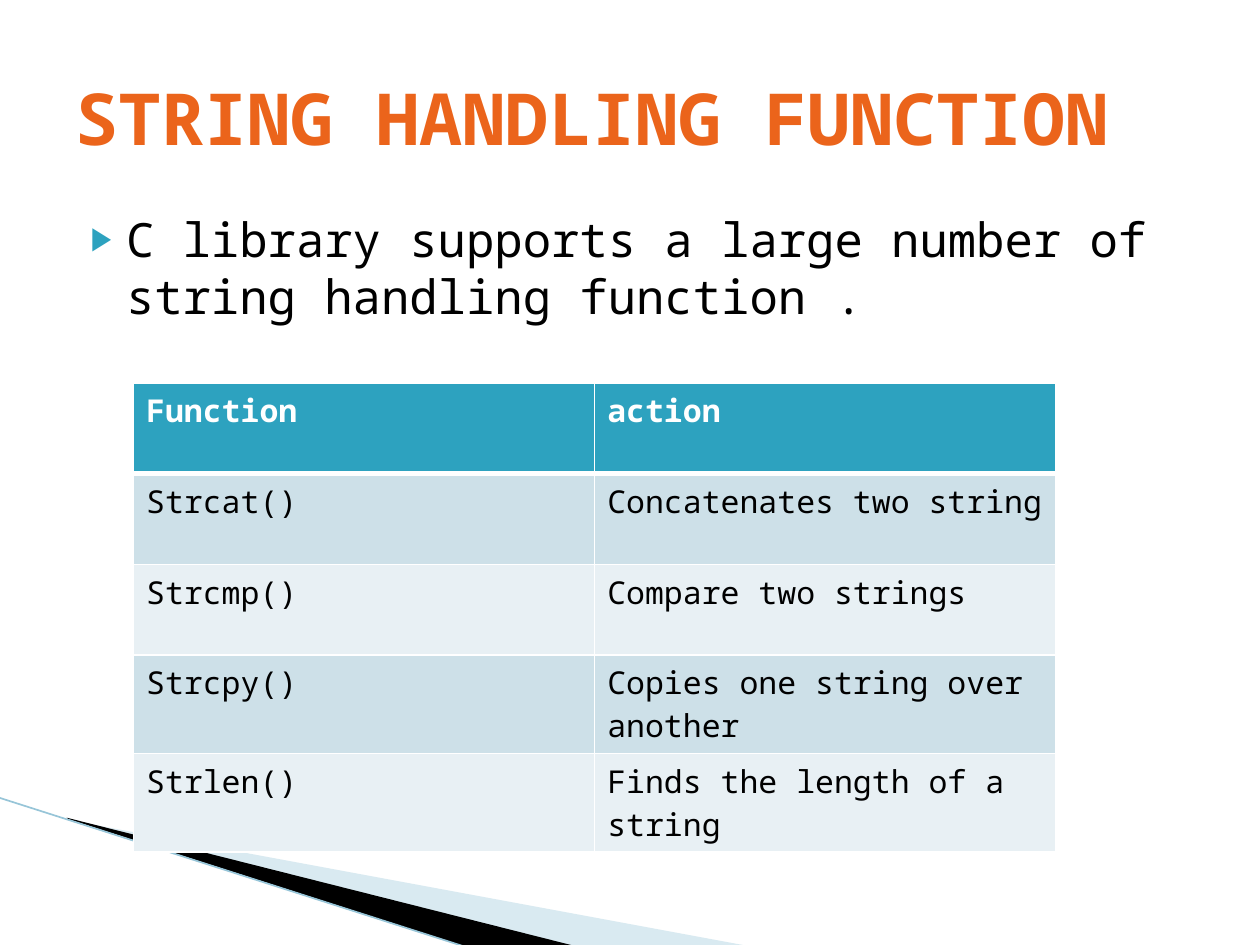
from lxml import etree
from pptx import Presentation, util as u
from pptx.dml.color import RGBColor
from pptx.enum import shapes, text
from pptx.oxml import ns

PX = 9144
FONT = "Noto Sans Mono"
WHITE = RGBColor(0xFF, 0xFF, 0xFF)
BLACK = RGBColor(0, 0, 0)
ORANGE = RGBColor(0xEB, 0x64, 0x1B)
TEAL = RGBColor(0x2D, 0xA2, 0xBF)
PALE_BLUE = RGBColor(0xA0, 0xCB, 0xDC)
EDGE_BLUE = RGBColor(0x97, 0xC5, 0xD8)
BANDS = (RGBColor(0xCD, 0xE0, 0xE8), RGBColor(0xE8, 0xF0, 0xF4))
ROWS = (
    ("Function", "action"),
    ("Strcat()", "Concatenates two string"),
    ("Strcmp()", "Compare two strings"),
    ("Strcpy()", "Copies one string over another"),
    ("Strlen()", "Finds the length of a string"),
)


def add_element(parent, tag, **attributes):
    """Append a drawing element with the given attributes."""
    return etree.SubElement(parent, ns.qn(tag), attributes)


def place(shape, box):
    """Move and size a shape to a box in px."""
    shape.left, shape.top, shape.width, shape.height = (v * PX for v in box)


def style(paragraph, size, color, bold=False):
    """Set the font of every run in a paragraph."""
    for run in paragraph.runs:
        font = run.font
        font.name, font.size, font.bold = FONT, u.Pt(size), bold
        font.color.rgb = color


def add_wedge(slide, box, points, color, alpha=100):
    """Draw a filled outline whose points are relative to the box."""
    left, top = box[:2]
    outline = [(left + x, top + y) for x, y in points]
    builder = slide.shapes.build_freeform(*outline[0], scale=PX)
    builder.add_line_segments(outline[1:], close=True)
    wedge = builder.convert_to_shape()
    wedge.shadow.inherit = False
    wedge.line.fill.background()
    wedge.fill.solid()
    wedge.fill.fore_color.rgb = color
    if alpha < 100:
        fill_color = wedge._element.spPr.find(".//" + ns.qn("a:srgbClr"))
        add_element(fill_color, "a:alpha", val=str(alpha * 1000))


def add_corner(slide, box):
    """Draw the slanted bands and edge line in the lower left corner."""
    left, top, width, height = box
    add_wedge(slide, (left + 56, top + 17), ((0, 1), (540, 101), (401, 101), (0, 0)), PALE_BLUE, 40)
    add_wedge(slide, (left + 54, top + 16), ((0, 0), (404, 102), (319, 103), (1, 1)), BLACK)
    edge = slide.shapes.add_connector(
        shapes.MSO_CONNECTOR.STRAIGHT,
        left * PX, top * PX, (left + width) * PX, (top + height) * PX)
    edge.line.color.rgb = EDGE_BLUE
    edge.line.width = u.Pt(0.95)
    add_element(edge._element.spPr, "a:effectLst")


def fill_title(title, box):
    """Write the slide title."""
    place(title, box)
    frame = title.text_frame
    frame.text = "STRING HANDLING FUNCTION"
    frame.vertical_anchor = text.MSO_ANCHOR.MIDDLE
    frame.paragraphs[0].alignment = text.PP_ALIGN.LEFT
    style(frame.paragraphs[0], 41, ORANGE, True)


def fill_body(body, box):
    """Write the bulleted statement."""
    place(body, box)
    body.text_frame.text = "C library supports a large number of string handling function ."
    paragraph = body.text_frame.paragraphs[0]
    paragraph.space_before = u.Pt(4)
    properties = paragraph._p.get_or_add_pPr()
    properties.set("marL", str(40 * PX))
    properties.set("indent", str(-28 * PX))
    add_element(add_element(properties, "a:buClr"), "a:srgbClr", val=str(TEAL))
    add_element(properties, "a:buSzPct", val="68000")
    add_element(properties, "a:buChar", char="▶")
    style(paragraph, 27, BLACK)


def add_borders(cell, bottom):
    """Give a cell white borders with the given bottom width in points."""
    properties = cell._tc.get_or_add_tcPr()
    for side, width in (("L", 1), ("R", 1), ("T", 1), ("B", bottom)):
        line = add_element(properties, f"a:ln{side}", w=str(u.Pt(width)))
        add_element(add_element(line, "a:solidFill"), "a:srgbClr", val=str(WHITE))


def add_function_table(slide, box):
    """Add the banded table of string functions."""
    left, top, width, height = (v * PX for v in box)
    table = slide.shapes.add_table(len(ROWS), len(ROWS[0]), left, top, width, height).table
    for r, row in enumerate(ROWS):
        header = r == 0
        for c, value in enumerate(row):
            cell = table.cell(r, c)
            cell.text = value
            style(cell.text_frame.paragraphs[0], 18, WHITE if header else BLACK, header)
            add_borders(cell, 3 if header else 1)
            cell.fill.solid()
            cell.fill.fore_color.rgb = TEAL if header else BANDS[(r - 1) % 2]


def main():
    """Build and save the slide."""
    presentation = Presentation()
    presentation.slide_width, presentation.slide_height = 1000 * PX, 750 * PX
    slide = presentation.slides.add_slide(presentation.slide_layouts[1])
    add_corner(slide, (-1, 633, 372, 119))
    fill_body(slide.placeholders[1], (50, 162, 900, 495))
    fill_title(slide.shapes.title, (50, 30, 900, 125))
    add_function_table(slide, (106, 304, 732, 360))
    presentation.save("out.pptx")


if __name__ == "__main__":
    main()
